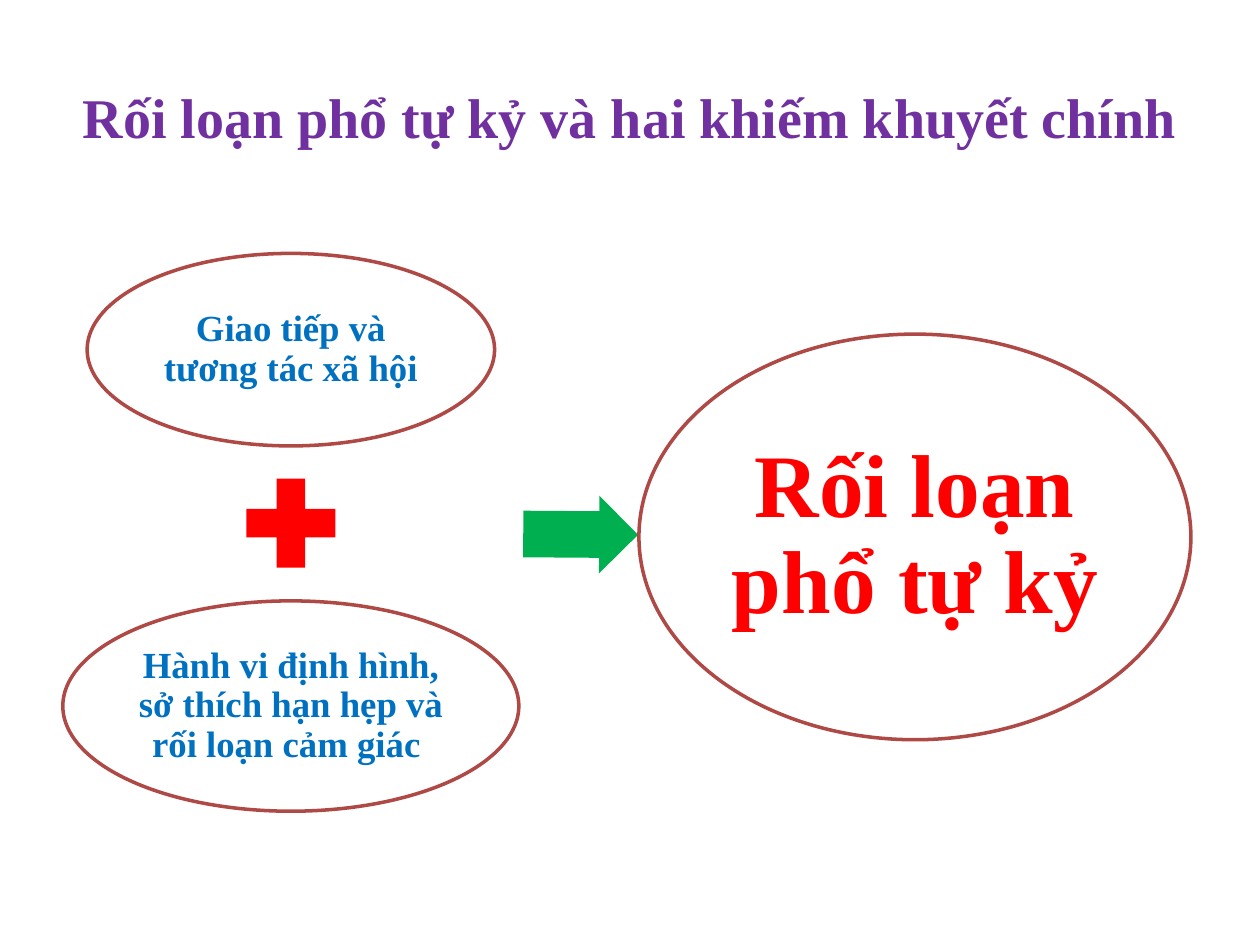
import math

import pptx
import pptx.dml.color
import pptx.enum.shapes
import pptx.enum.text
import pptx.util

Pt = pptx.util.Pt
SHAPES = pptx.enum.shapes.MSO_SHAPE
FONT = "Times New Roman"
COLORS = {
    "title": "7030A0",
    "deficit": "0070C0",
    "disorder": "FF0000",
    "plus": "FF0000",
    "arrow": "00B050",
    "oval_fill": "FFFFFF",
    "oval_line": "AE4946",
}


def rgb(name):
    return pptx.dml.color.RGBColor.from_string(COLORS[name])


def add_label(slide, box, text, size, color, inset_x, inset_y, spacing=1.0):
    """Add bold text centred both ways in box (left, top, width, height)."""
    label = slide.shapes.add_textbox(*map(Pt, box))
    frame = label.text_frame
    frame.word_wrap = True
    frame.vertical_anchor = pptx.enum.text.MSO_ANCHOR.MIDDLE
    frame.margin_left = frame.margin_right = Pt(inset_x)
    frame.margin_top = frame.margin_bottom = Pt(inset_y)
    paragraph = frame.paragraphs[0]
    paragraph.alignment = pptx.enum.text.PP_ALIGN.CENTER
    paragraph.line_spacing = spacing
    run = paragraph.add_run()
    run.text = text
    run.font.name = FONT
    run.font.size = Pt(size)
    run.font.bold = True
    run.font.color.rgb = rgb(color)


def add_filled(slide, preset, box, color):
    """Add a preset shape with a flat fill and no outline."""
    shape = slide.shapes.add_shape(preset, *map(Pt, box))
    shape.shadow.inherit = False
    shape.fill.solid()
    shape.fill.fore_color.rgb = rgb(color)
    shape.line.fill.background()
    return shape


def add_oval(slide, center, size, text, font_size, color, inset):
    """Add an outlined oval with text in its inscribed rectangle."""
    (x, y), (width, height) = center, size
    oval = add_filled(slide, SHAPES.OVAL,
                      (x - width / 2, y - height / 2, width, height), "oval_fill")
    oval.line.color.rgb = rgb("oval_line")
    oval.line.width = Pt(2)
    inner_width, inner_height = width / math.sqrt(2), height / math.sqrt(2)
    inner = (x - inner_width / 2, y - inner_height / 2, inner_width, inner_height)
    add_label(slide, inner, text, font_size, color, inset, inset, spacing=0.9)


def main():
    deck = pptx.Presentation()
    deck.slide_width, deck.slide_height = Pt(720), Pt(540)
    slide = deck.slides.add_slide(deck.slide_layouts[6])

    add_label(slide, (36, 21.6, 648, 90),
              "Rối loạn phổ tự kỷ và hai khiếm khuyết chính", 32, "title", 7.2, 3.6)

    deficits_x = 166.2
    plus_size = 69.2
    add_oval(slide, (deficits_x, 199.8), (232.8, 110),
             "Giao tiếp và tương tác xã hội", 21, "deficit", 2.1)
    add_filled(slide, SHAPES.MATH_PLUS,
               (deficits_x - plus_size / 2, 264.4, plus_size, plus_size), "plus")
    add_oval(slide, (deficits_x, 403.5), (260.6, 120.2),
             "Hành vi định hình, sở thích hạn hẹp và rối loạn cảm giác ",
             21, "deficit", 2.1)

    arrow = add_filled(slide, SHAPES.RIGHT_ARROW, (299, 283.2, 65.6, 44.4), "arrow")
    arrow.adjustments[0] = 0.6
    arrow.adjustments[1] = 0.5
    arrow.rotation = 0.4

    add_oval(slide, (522.8, 306.8), (315.4, 231.8),
             "Rối loạn phổ tự kỷ", 51, "disorder", 5.1)

    deck.save("out.pptx")


if __name__ == "__main__":
    main()
